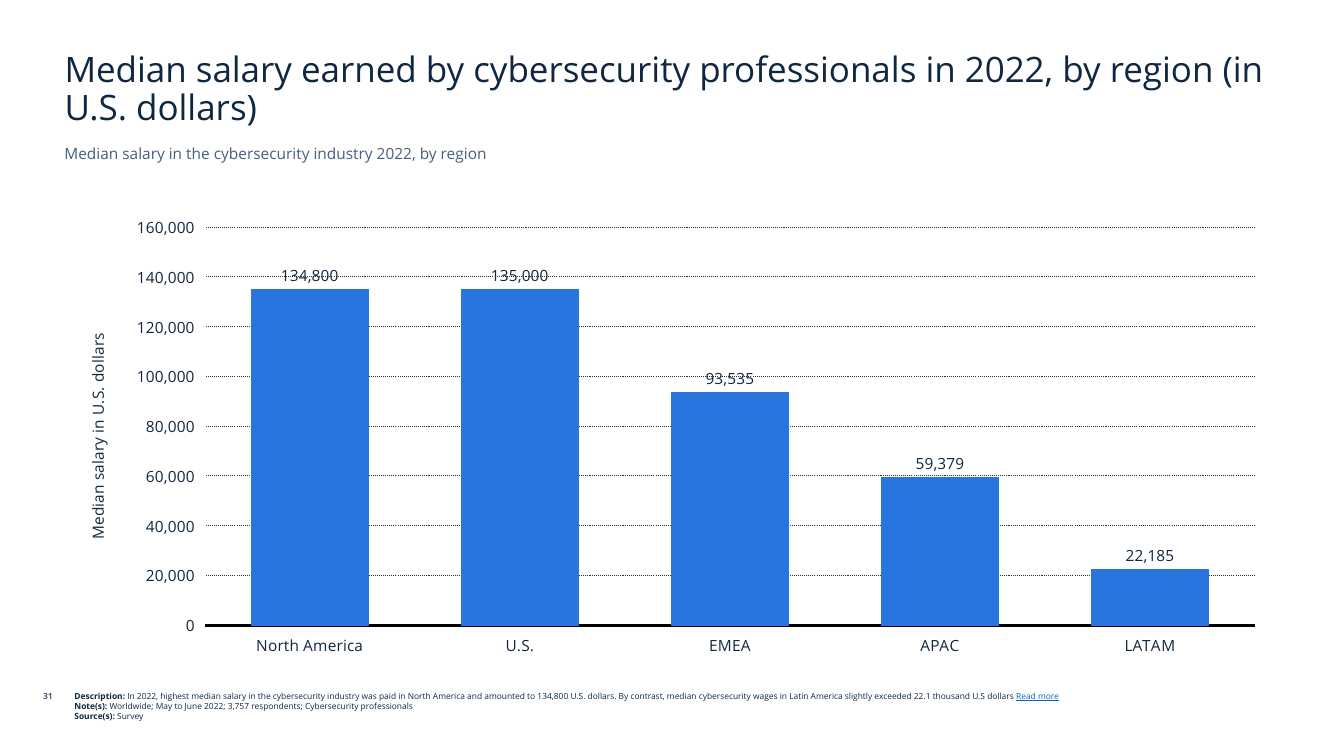
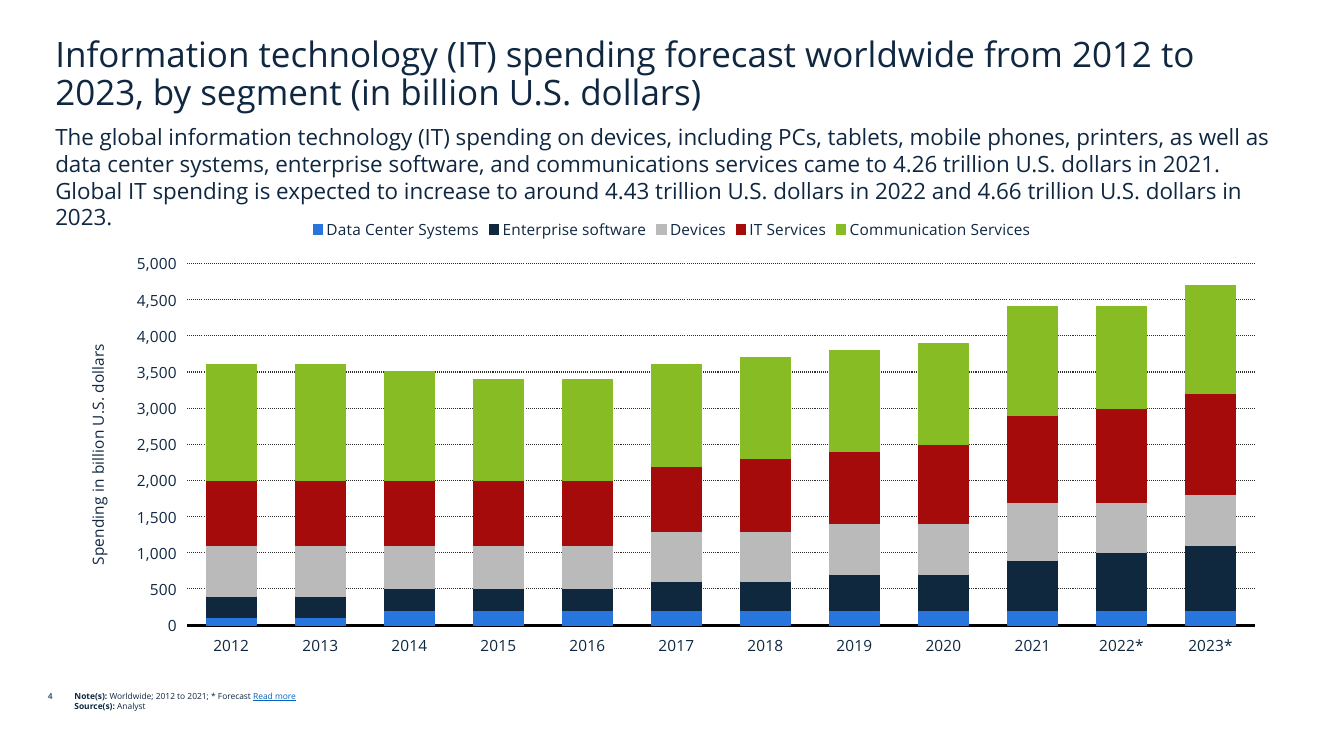
from pptx import Presentation
from pptx.chart.data import CategoryChartData
from pptx.dml.color import RGBColor
from pptx.enum.chart import (XL_CHART_TYPE, XL_LABEL_POSITION, XL_LEGEND_POSITION,
                             XL_TICK_LABEL_POSITION, XL_TICK_MARK)
from pptx.enum.dml import MSO_LINE
from pptx.enum.text import MSO_ANCHOR, MSO_AUTO_SIZE, PP_ALIGN
from pptx.util import Inches, Pt

NAVY = RGBColor(0x0F, 0x27, 0x41)
SLATE = RGBColor(0x45, 0x5F, 0x7C)
LINK = RGBColor(0x05, 0x63, 0xC1)
BLACK = RGBColor(0x00, 0x00, 0x00)
GRID = RGBColor(0x2F, 0x2F, 0x2F)
SERIES_COLORS = [
    RGBColor(0x28, 0x75, 0xDD),
    RGBColor(0x0F, 0x28, 0x3E),
    RGBColor(0xBA, 0xBA, 0xBA),
    RGBColor(0xA6, 0x0B, 0x0B),
    RGBColor(0x87, 0xBC, 0x24),
]


class ReportDeck:
    font_name = "Open Sans"
    title_size = 25
    chart_size = 11
    footer_size = 6

    def __init__(self):
        self.deck = Presentation()
        self.deck.slide_width = Inches(13.33)
        self.deck.slide_height = Inches(7.5)
        self.slide = None

    def style(self, font, size, color=NAVY, bold=False):
        font.name = self.font_name
        font.size = Pt(size)
        font.bold = bold
        font.color.rgb = color

    def place(self, shape, left, top, width, height):
        shape.left, shape.top = Inches(left), Inches(top)
        shape.width, shape.height = Inches(width), Inches(height)

    def add_slide(self, title, left, top, width, height):
        self.slide = self.deck.slides.add_slide(self.deck.slide_layouts[5])
        box = self.slide.shapes.title
        self.place(box, left, top, width, height)
        frame = box.text_frame
        frame.text = title
        frame.word_wrap = True
        frame.auto_size = MSO_AUTO_SIZE.NONE
        frame.vertical_anchor = MSO_ANCHOR.BOTTOM
        para = frame.paragraphs[0]
        para.alignment = PP_ALIGN.LEFT
        para.line_spacing = 0.9
        self.style(para.runs[0].font, self.title_size)

    def add_text(self, text, left, top, width, height, size, color=NAVY,
                 bold=False, align=PP_ALIGN.LEFT):
        box = self.slide.shapes.add_textbox(
            Inches(left), Inches(top), Inches(width), Inches(height))
        frame = box.text_frame
        frame.word_wrap = True
        frame.text = text
        para = frame.paragraphs[0]
        para.alignment = align
        self.style(para.runs[0].font, size, color, bold)

    def add_footer(self, number, notes):
        self.add_text(number, -0.1, 6.81, 0.72, 0.3, self.footer_size, SLATE,
                      bold=True, align=PP_ALIGN.RIGHT)
        box = self.slide.shapes.add_textbox(
            Inches(0.64), Inches(6.81), Inches(10.47), Inches(0.58))
        frame = box.text_frame
        frame.word_wrap = True
        for index, (label, note) in enumerate(notes):
            para = frame.paragraphs[0] if index == 0 else frame.add_paragraph()
            self.add_span(para, f"{label}: ", bold=True)
            self.add_span(para, note)
        link = self.add_span(frame.paragraphs[0], "Read more", LINK)
        link.font.underline = True

    def add_span(self, para, text, color=NAVY, bold=False):
        span = para.add_run()
        span.text = text
        self.style(span.font, self.footer_size, color, bold)
        return span

    def add_columns(self, kind, categories, series, axis_title, maximum, step, overlap):
        data = CategoryChartData()
        data.categories = categories
        for name, values in series.items():
            data.add_series(name, values)
        chart = self.slide.shapes.add_chart(
            kind, Inches(0.64), Inches(2.06), Inches(12.05), Inches(4.54), data).chart
        self.style(chart.font, self.chart_size)
        chart.has_title = False
        chart.has_legend = False
        plot = chart.plots[0]
        plot.gap_width = 80
        plot.overlap = overlap
        plot.vary_by_categories = False
        for column, color in zip(plot.series, SERIES_COLORS):
            column.format.fill.solid()
            column.format.fill.fore_color.rgb = color
            column.format.line.color.rgb = color
            column.format.line.width = Pt(0.75)
        self.format_axes(chart, axis_title, maximum, step)
        return chart

    def format_axes(self, chart, axis_title, maximum, step):
        for axis in (chart.category_axis, chart.value_axis):
            axis.major_tick_mark = XL_TICK_MARK.NONE
            axis.minor_tick_mark = XL_TICK_MARK.NONE
            axis.tick_label_position = XL_TICK_LABEL_POSITION.LOW
            self.style(axis.tick_labels.font, self.chart_size)
        base = chart.category_axis.format.line
        base.color.rgb = BLACK
        base.width = Pt(2)

        axis = chart.value_axis
        axis.minimum_scale = 0
        axis.maximum_scale = maximum
        axis.major_unit = step
        axis.tick_labels.number_format = "#,##0"
        axis.tick_labels.number_format_is_linked = False
        axis.format.line.fill.background()
        grid = axis.major_gridlines.format.line
        grid.color.rgb = GRID
        grid.width = Pt(0.75)
        grid.dash_style = MSO_LINE.ROUND_DOT
        frame = axis.axis_title.text_frame
        frame.text = axis_title
        self.style(frame.paragraphs[0].runs[0].font, self.chart_size)

    def add_labels(self, chart):
        labels = chart.plots[0].series[0].data_labels
        labels.show_value = True
        labels.number_format = "#,##0"
        labels.number_format_is_linked = False
        labels.position = XL_LABEL_POSITION.OUTSIDE_END
        self.style(labels.font, self.chart_size)

    def add_legend(self, chart):
        chart.has_legend = True
        chart.legend.position = XL_LEGEND_POSITION.TOP
        chart.legend.include_in_layout = False
        self.style(chart.legend.font, self.chart_size)


def add_salary_slide(report):
    report.add_slide(
        "Median salary earned by cybersecurity professionals in 2022, "
        "by region (in U.S. dollars)", 0.54, 0.46, 12.24, 0.86)
    report.add_text("Median salary in the cybersecurity industry 2022, by region",
                    0.54, 1.38, 12.24, 0.34, 11, SLATE)
    chart = report.add_columns(
        XL_CHART_TYPE.COLUMN_CLUSTERED,
        ["North America", "U.S.", "EMEA", "APAC", "LATAM"],
        {"Series 1": [134800, 135000, 93535, 59379, 22185]},
        "Median salary in U.S. dollars", 160000, 20000, -30)
    report.add_labels(chart)
    report.add_footer("31", [
        ("Description",
         "In 2022, highest median salary in the cybersecurity industry was paid in "
         "North America and amounted to 134,800 U.S. dollars. By contrast, median "
         "cybersecurity wages in Latin America slightly exceeded 22.1 thousand "
         "U.S dollars "),
        ("Note(s)", "Worldwide; May to June 2022; 3,757 respondents; "
                    "Cybersecurity professionals"),
        ("Source(s)", "Survey"),
    ])


def add_spending_slide(report):
    report.add_slide(
        "Information technology (IT) spending forecast worldwide from 2012 to 2023, "
        "by segment (in billion U.S. dollars)", 0.45, 0.26, 12.33, 0.91)
    report.add_text(
        "The global information technology (IT) spending on devices, including PCs, "
        "tablets, mobile phones, printers, as well as data center systems, enterprise "
        "software, and communications services came to 4.26 trillion U.S. dollars in "
        "2021. Global IT spending is expected to increase to around 4.43 trillion U.S. "
        "dollars in 2022 and 4.66 trillion U.S. dollars in 2023.",
        0.45, 1.17, 12.33, 0.55, 16)
    years = [str(year) for year in range(2012, 2022)] + ["2022*", "2023*"]
    segments = {
        "Data Center Systems":
            [100, 100, 200, 200, 200, 200, 200, 200, 200, 200, 200, 200],
        "Enterprise software":
            [300, 300, 300, 300, 300, 400, 400, 500, 500, 700, 800, 900],
        "Devices":
            [700, 700, 600, 600, 600, 700, 700, 700, 700, 800, 700, 700],
        "IT Services":
            [900, 900, 900, 900, 900, 900, 1000, 1000, 1100, 1200, 1300, 1400],
        "Communication Services":
            [1600, 1600, 1500, 1400, 1400, 1400, 1400, 1400, 1400, 1500, 1400, 1500],
    }
    chart = report.add_columns(XL_CHART_TYPE.COLUMN_STACKED, years, segments,
                               "Spending in billion U.S. dollars", 5000, 500, 100)
    report.add_legend(chart)
    report.add_footer("4", [
        ("Note(s)", "Worldwide; 2012 to 2021; * Forecast "),
        ("Source(s)", "Analyst"),
    ])


def main():
    report = ReportDeck()
    add_salary_slide(report)
    add_spending_slide(report)
    report.deck.save("out.pptx")


if __name__ == "__main__":
    main()
